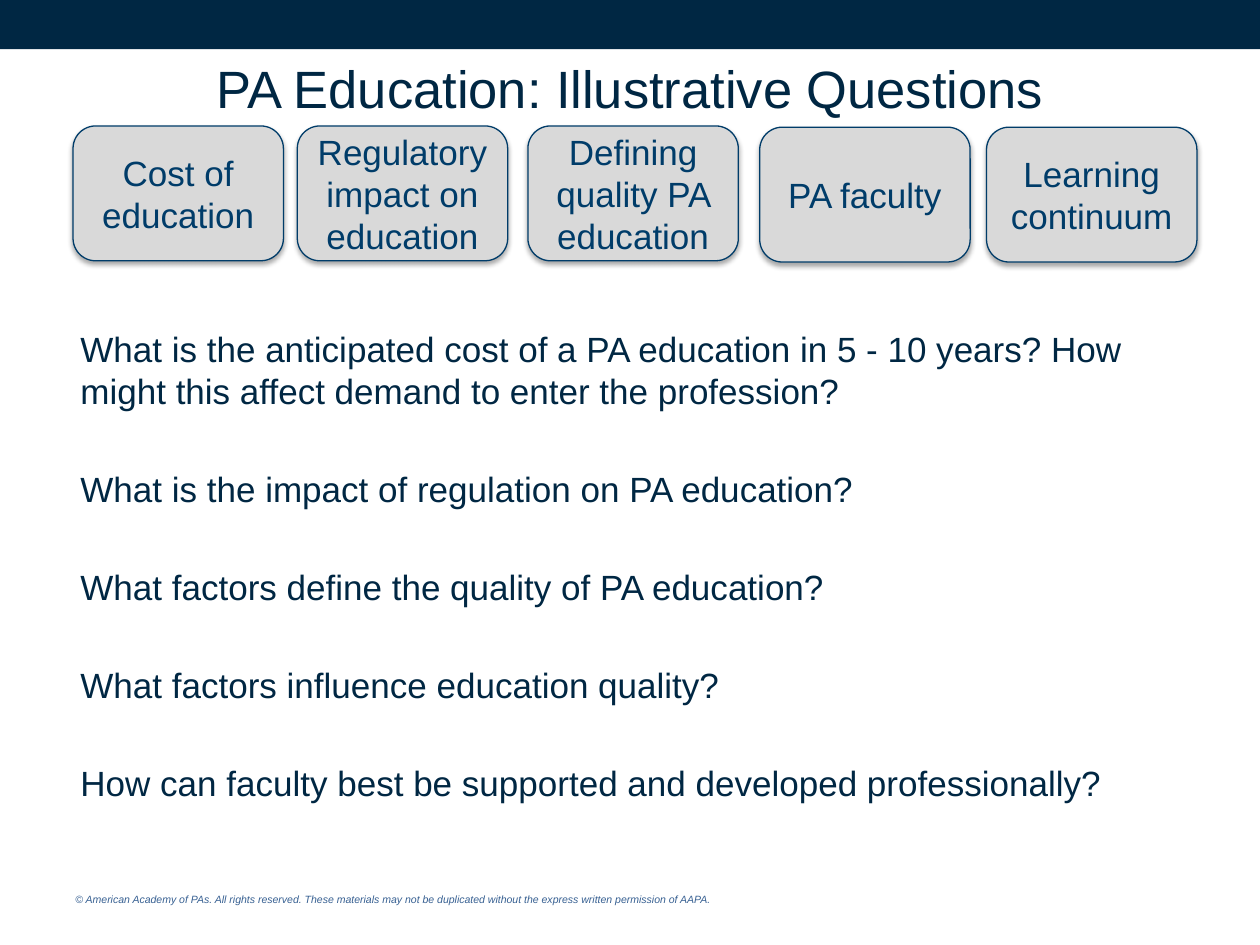
from dataclasses import dataclass

from lxml.etree import SubElement
from pptx import Presentation
from pptx.dml.color import RGBColor
from pptx.enum.shapes import MSO_SHAPE
from pptx.enum.text import MSO_ANCHOR, PP_ALIGN
from pptx.oxml.ns import qn
from pptx.util import Inches, Pt

COLUMNS, ROWS = 1000, 750
SLIDE_WIDTH, SLIDE_HEIGHT = Inches(10), Inches(7.5)
NAVY, BLUE, SLATE, GREY = "002743", "003C69", "376092", "D9D9D9"


@dataclass(frozen=True)
class Area:
    """A rectangle in columns and rows of the slide grid."""
    column: float
    row: float
    columns: float
    rows: float

    def lengths(self) -> tuple[int, int, int, int]:
        """Return left, top, width and height."""
        across, down = SLIDE_WIDTH / COLUMNS, SLIDE_HEIGHT / ROWS
        return (round(self.column * across), round(self.row * down),
                round(self.columns * across), round(self.rows * down))


@dataclass(frozen=True)
class Style:
    """The look of a block of text."""
    size: float
    color: str
    align: PP_ALIGN = PP_ALIGN.LEFT
    anchor: MSO_ANCHOR = MSO_ANCHOR.TOP
    italic: bool = False
    gap: float = 0


@dataclass(frozen=True)
class Topic:
    """A topic tile with its place on the grid."""
    label: str
    column: float
    row: float


TOPICS = [
    Topic("Cost of education", 58, 100),
    Topic("Regulatory impact on education", 236, 100),
    Topic("Defining quality PA education", 419, 100),
    Topic("PA faculty", 603, 101),
    Topic("Learning continuum", 783, 101),
]
QUESTIONS = [
    "What is the anticipated cost of a PA education in 5 - 10 years? "
    "How might this affect demand to enter the profession?",
    "What is the impact of regulation on PA education?",
    "What factors define the quality of PA education?",
    "What factors influence education quality?",
    "How can faculty best be supported and developed professionally?",
]
COPYRIGHT = ("© American Academy of PAs. All rights reserved. These materials may not be "
             "duplicated without the express written permission of AAPA.")

TITLE_STYLE = Style(30, NAVY, PP_ALIGN.CENTER, MSO_ANCHOR.MIDDLE)
TOPIC_STYLE = Style(20, BLUE, PP_ALIGN.CENTER, MSO_ANCHOR.MIDDLE)
QUESTION_STYLE = Style(20, NAVY, gap=32)
COPYRIGHT_STYLE = Style(6, SLATE, italic=True)


def rgb(color: str) -> RGBColor:
    """Turn a hex string into a colour."""
    return RGBColor.from_string(color)


def write(frame, lines: list[str], style: Style) -> None:
    """Fill a text frame with one paragraph per line."""
    frame.word_wrap = True
    frame.vertical_anchor = style.anchor
    frame.text = "\n".join(lines)
    for index, paragraph in enumerate(frame.paragraphs):
        paragraph.alignment = style.align
        if index:
            paragraph.space_before = Pt(style.gap)
        for run in paragraph.runs:
            run.font.name = "Arial"
            run.font.size = Pt(style.size)
            run.font.italic = style.italic
            run.font.color.rgb = rgb(style.color)


def add_text(slide, area: Area, lines: list[str], style: Style):
    """Add a text box and return its frame."""
    frame = slide.shapes.add_textbox(*area.lengths()).text_frame
    write(frame, lines, style)
    return frame


def add_block(slide, kind: MSO_SHAPE, area: Area, fill: str):
    """Add a filled shape without line or shadow."""
    block = slide.shapes.add_shape(kind, *area.lengths())
    block.shadow.inherit = False
    block.fill.solid()
    block.fill.fore_color.rgb = rgb(fill)
    block.line.fill.background()
    return block


def cast_shadow(block) -> None:
    """Give a shape a soft shadow below it."""
    effects = block.element.spPr.find(qn("a:effectLst"))
    shadow = SubElement(effects, qn("a:outerShdw"), blurRad=str(Pt(3.1)), dist=str(Pt(1.8)),
                        dir="5400000", rotWithShape="0")
    color = SubElement(shadow, qn("a:srgbClr"), val="000000")
    SubElement(color, qn("a:alpha"), val="35000")


def add_topic(slide, topic: Topic) -> None:
    """Add one topic tile."""
    tile = add_block(slide, MSO_SHAPE.ROUNDED_RECTANGLE,
                     Area(topic.column, topic.row, 167, 107), GREY)
    tile.line.color.rgb = rgb(BLUE)
    tile.line.width = Pt(0.75)
    cast_shadow(tile)
    write(tile.text_frame, [topic.label], TOPIC_STYLE)


def main() -> None:
    """Build and save the slide."""
    deck = Presentation()
    deck.slide_width, deck.slide_height = SLIDE_WIDTH, SLIDE_HEIGHT
    slide = deck.slides.add_slide(deck.slide_layouts[6])
    add_block(slide, MSO_SHAPE.RECTANGLE, Area(0, 0, COLUMNS, 39), NAVY)
    add_text(slide, Area(50, 704, 571, 20), [COPYRIGHT], COPYRIGHT_STYLE)
    add_text(slide, Area(50, 21, 900, 97), ["PA Education: Illustrative Questions"], TITLE_STYLE)
    questions = add_text(slide, Area(54, 213, 900, 495), QUESTIONS, QUESTION_STYLE)
    questions.margin_top = Inches(0.47)
    for topic in TOPICS:
        add_topic(slide, topic)
    deck.save("out.pptx")


if __name__ == "__main__":
    main()
